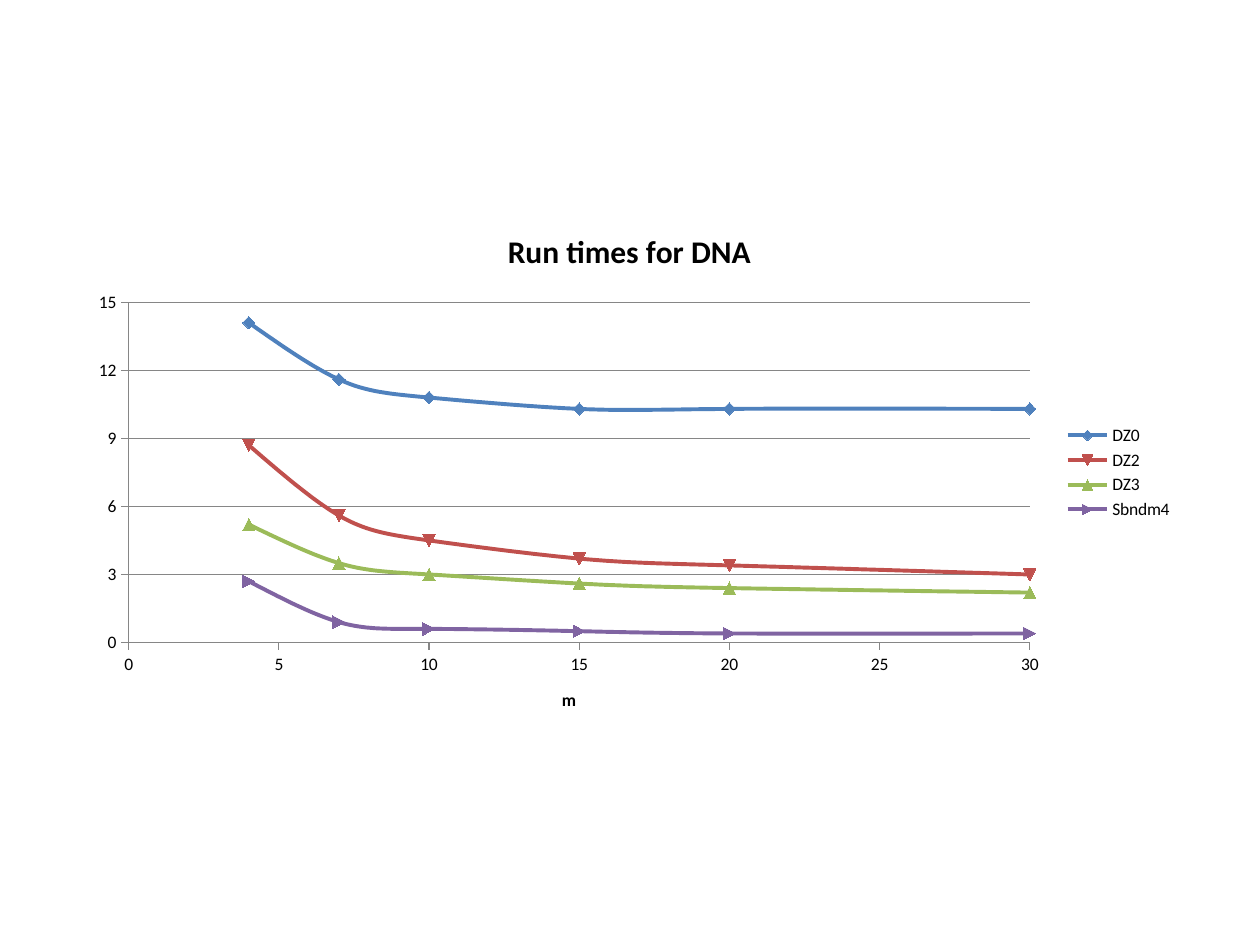
"""Build a slide with a smooth scatter chart of run times for DNA."""
from lxml import etree
from pptx import Presentation
from pptx.chart.data import XyChartData
from pptx.dml.color import RGBColor
from pptx.enum.chart import XL_CHART_TYPE, XL_LEGEND_POSITION, XL_TICK_MARK
from pptx.oxml.ns import qn
from pptx.util import Inches, Pt

SMOOTH_SCATTER = XL_CHART_TYPE.XY_SCATTER_SMOOTH
LEGEND_RIGHT = XL_LEGEND_POSITION.RIGHT
TICK_OUTSIDE = XL_TICK_MARK.OUTSIDE
TICK_NONE = XL_TICK_MARK.NONE

BLACK = RGBColor(0x00, 0x00, 0x00)
GRAY = RGBColor(0x86, 0x86, 0x86)
BLUE = RGBColor(0x4F, 0x81, 0xBD)
RED = RGBColor(0xC0, 0x50, 0x4D)
GREEN = RGBColor(0x9B, 0xBB, 0x59)
PURPLE = RGBColor(0x80, 0x64, 0xA2)

PATTERN_LENGTHS = [4, 7, 10, 15, 20, 30]
RUN_TIMES = {
    "DZ0": (BLUE, [14.1, 11.6, 10.8, 10.3, 10.3, 10.3]),
    "DZ2": (RED, [8.7, 5.6, 4.5, 3.7, 3.4, 3]),
    "DZ3": (GREEN, [5.2, 3.5, 3, 2.6, 2.4, 2.2]),
    "Sbndm4": (PURPLE, [2.7, 0.9, 0.6, 0.5, 0.4, 0.4]),
}
PLOT_LAYOUT = {
    "layoutTarget": "inner", "xMode": "edge", "yMode": "edge",
    "x": 0.05, "y": 0.18, "w": 0.81, "h": 0.64,
}
AXIS_FORMAT = {
    "minimum_scale": 0,
    "major_tick_mark": TICK_OUTSIDE,
    "minor_tick_mark": TICK_NONE,
}


def set_attributes(target, values):
    for name, value in values.items():
        setattr(target, name, value)


def write_title(owner, text, size):
    frame = owner.text_frame
    frame.text = text
    font = frame.paragraphs[0].runs[0].font
    set_attributes(font, {"name": "Calibri", "size": Pt(size), "bold": True})
    font.color.rgb = BLACK


deck = Presentation()
deck.slide_width = Inches(10)
deck.slide_height = Inches(7.5)
page = deck.slides.add_slide(deck.slide_layouts[6])

chart_data = XyChartData()
for name, (color, times) in RUN_TIMES.items():
    points = chart_data.add_series(name)
    for length, time in zip(PATTERN_LENGTHS, times):
        points.add_data_point(length, time)

chart = page.shapes.add_chart(
    SMOOTH_SCATTER, Inches(0.58), Inches(1.64), Inches(8.83), Inches(4.22), chart_data
).chart
set_attributes(chart.font, {"name": "Calibri", "size": Pt(10)})
chart.font.color.rgb = BLACK
chart.has_title = True
write_title(chart.chart_title, "Run times for DNA", 18)
chart.chart_title.include_in_layout = False
chart.has_legend = True
set_attributes(chart.legend, {"position": LEGEND_RIGHT, "include_in_layout": False})

length_axis, time_axis = chart.category_axis, chart.value_axis
for axis, maximum, step, grid in (
    (length_axis, 30, 5, False),
    (time_axis, 15, 3, True),
):
    set_attributes(axis, AXIS_FORMAT)
    set_attributes(axis, {
        "maximum_scale": maximum, "major_unit": step, "has_major_gridlines": grid,
    })
    axis.format.line.color.rgb = GRAY
time_axis.major_gridlines.format.line.color.rgb = GRAY
length_axis.has_title = True
write_title(length_axis.axis_title, "m", 10)

plot = chart.plots[0]
plot.vary_by_categories = False
for series in plot.series:
    color = RUN_TIMES[series.name][0]
    series.format.line.color.rgb = color
    series.format.line.width = Pt(2.25)
    series.marker.size = 7
    series.marker.format.fill.solid()
    series.marker.format.fill.fore_color.rgb = color
    series.marker.format.line.color.rgb = color
    series._element.get_or_add_smooth().val = True

plot_area = chart._chartSpace.chart.plotArea
for old_layout in plot_area.findall(qn("c:layout")):
    plot_area.remove(old_layout)
layout = etree.Element(qn("c:layout"))
manual_layout = etree.SubElement(layout, qn("c:manualLayout"))
for tag, value in PLOT_LAYOUT.items():
    etree.SubElement(manual_layout, qn(f"c:{tag}"), val=str(value))
plot_area.insert(0, layout)

deck.save("out.pptx")
